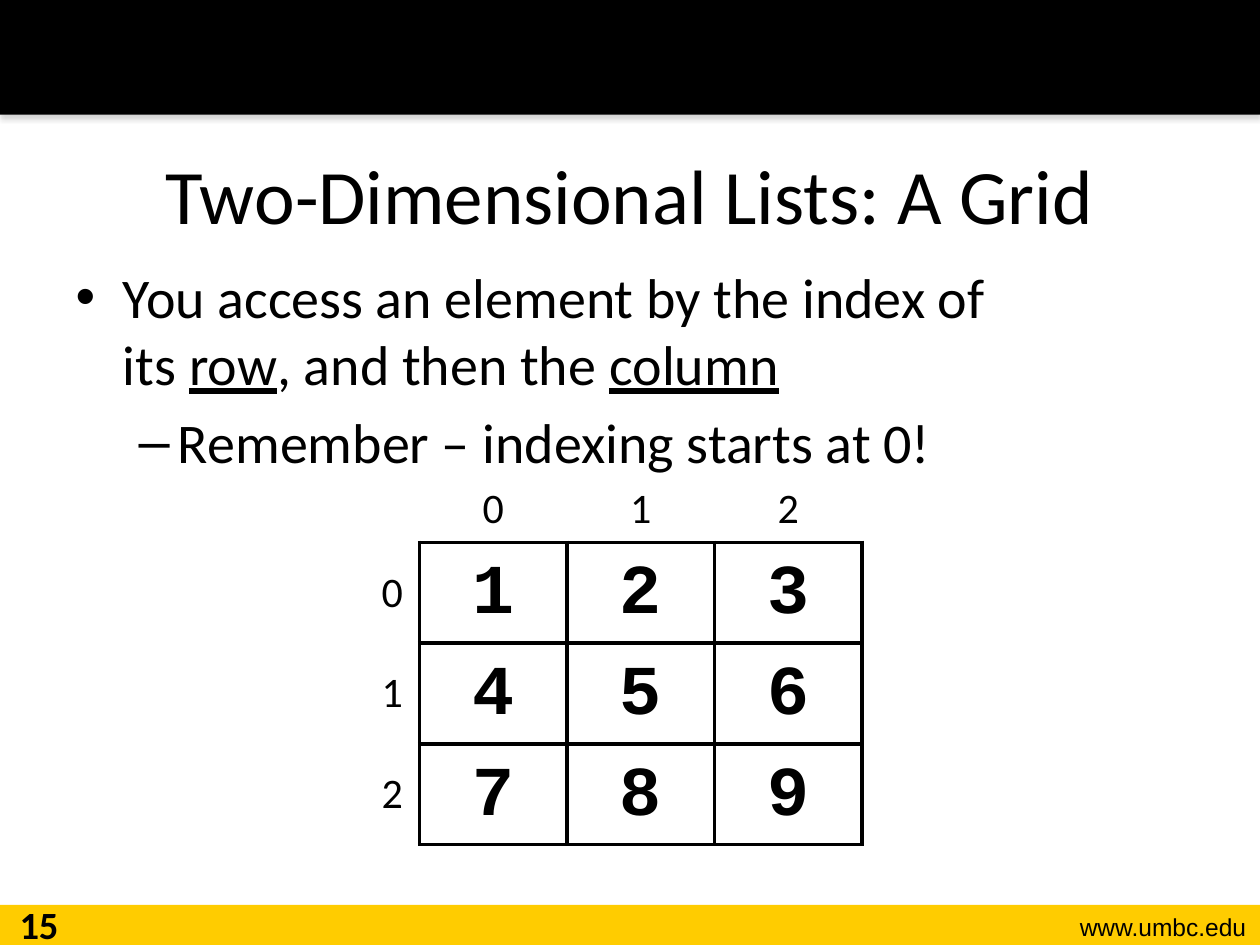
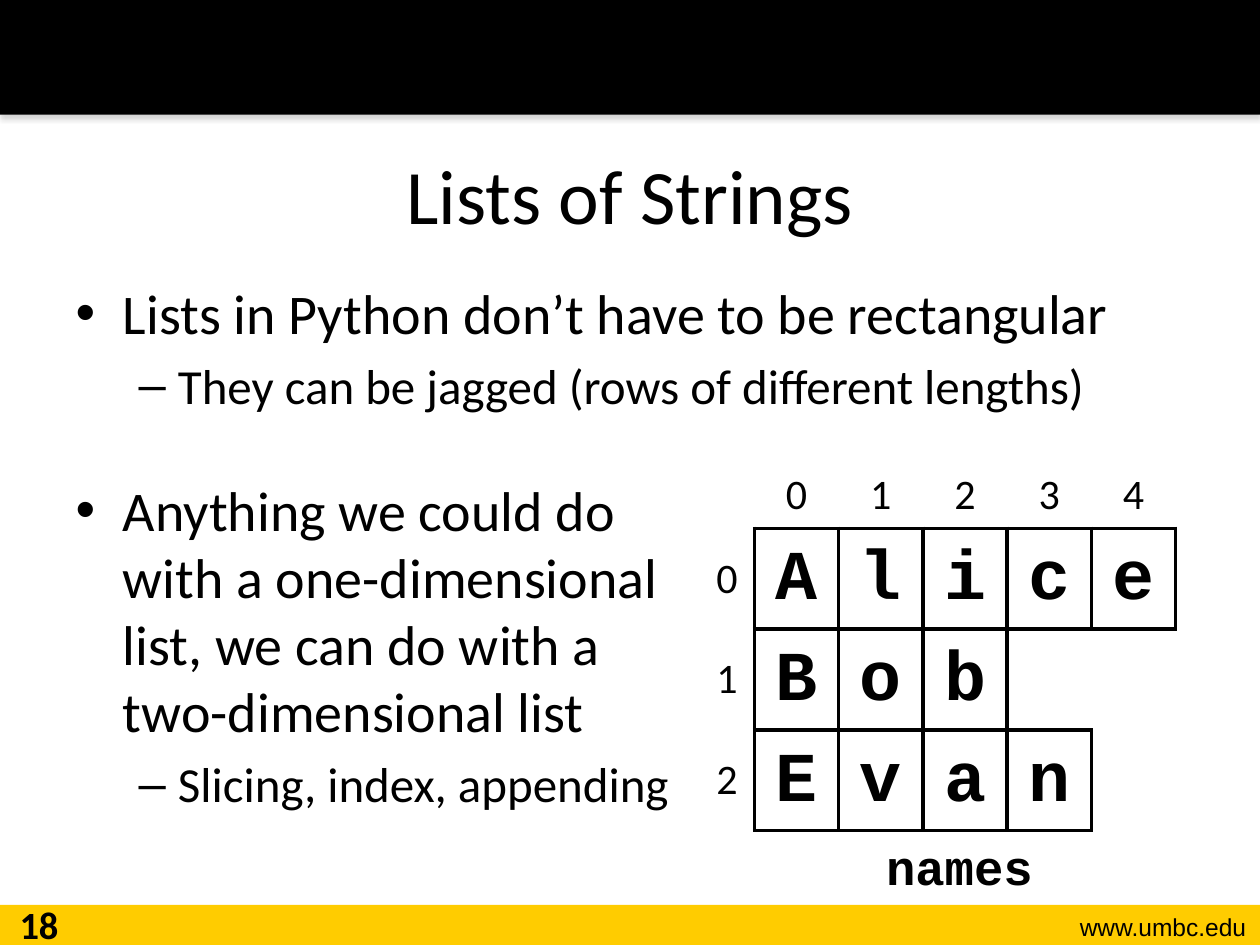
"""Build two slides on two-dimensional lists, each with an indexed grid."""
from dataclasses import dataclass
from typing import Any, Optional

from lxml import etree
from pptx import Presentation
from pptx.dml.color import RGBColor
from pptx.enum import shapes, text
from pptx.oxml.ns import qn
from pptx.util import Pt

BLACK = RGBColor(0x00, 0x00, 0x00)
WHITE = RGBColor(0xFF, 0xFF, 0xFF)
GOLD = RGBColor(0xFF, 0xCC, 0x00)
GRAY = RGBColor(0x80, 0x80, 0x80)
SANS, CODE = "Calibri", "Courier New"
WIDE, HIGH = 720, 540
LEFT, MID, RIGHT = text.PP_ALIGN.LEFT, text.PP_ALIGN.CENTER, text.PP_ALIGN.RIGHT
NO_STYLE = "{2D5ABB26-0587-4C30-8999-92F81FD0307C}"


@dataclass(frozen=True)
class Box:
    x: float
    y: float
    w: float
    h: float

    def pts(self) -> tuple:
        return Pt(self.x), Pt(self.y), Pt(self.w), Pt(self.h)


@dataclass(frozen=True)
class Item:
    words: str
    size: float = 32
    level: int = 0
    gap: float = 0


@dataclass(frozen=True)
class Grid:
    x: float
    y: float
    cols: int
    rows: tuple[str, ...]


@dataclass(frozen=True)
class Page:
    title: str
    num: str
    body: Box
    items: tuple[Item, ...]
    grid: Grid
    label: Optional[str] = None


PAGES = (
    Page("Two-Dimensional Lists: A Grid", "15", Box(36, 146.2, 648, 327.6), (
        Item("You access an element by the index of\nits _row_, and then the _column_"),
        Item("Remember – indexing starts at 0!", level=1, gap=6.4),
    ), Grid(155.5, 271.5, 4, ("123", "456", "789"))),
    Page("Lists of Strings", "18", Box(36, 155.5, 648, 355.7), (
        Item("Lists in Python don’t have to be rectangular"),
        Item("They can be jagged (rows of different lengths)", 28, 1, 5.6),
        Item("Anything we could do\nwith a one-dimensional\nlist, we can do with a\n"
             "two-dimensional list", gap=34.8),
        Item("Slicing, index, appending", 28, 1, 5.6),
    ), Grid(383, 263.5, 7, ("Alice", "Bob", "Evan")), "names"),
)


def write(para: Any, words: str, size: float, face: str = SANS, bold: bool = False,
          align: Any = LEFT, gap: float = 0) -> None:
    """Fill a paragraph; newlines break it and _marks_ underline."""
    para.alignment = align
    para.space_before = Pt(gap)
    for i, line in enumerate(words.split("\n")):
        if i:
            para.add_line_break()
        for j, part in enumerate(line.split("_")):
            if part:
                run = para.add_run()
                run.text = part
                font = run.font
                font.name, font.size, font.bold = face, Pt(size), bold
                font.color.rgb = BLACK
                if j % 2:
                    font.underline = True


def place(shape: Any, box: Box) -> None:
    """Move and size a shape."""
    shape.left, shape.top, shape.width, shape.height = box.pts()


def band(slide: Any, box: Box, color: RGBColor) -> Any:
    """Draw a flat bar."""
    bar = slide.shapes.add_shape(shapes.MSO_SHAPE.RECTANGLE, *box.pts())
    bar.fill.solid()
    bar.fill.fore_color.rgb = color
    bar.line.fill.background()
    bar.shadow.inherit = False
    return bar


def shade(bar: Any) -> None:
    """Give a bar a soft shadow below it."""
    glow = etree.SubElement(bar._element.spPr.find(qn("a:effectLst")), qn("a:outerShdw"),
                            blurRad=str(Pt(3.1)), dist=str(Pt(1.8)), dir="5400000",
                            rotWithShape="0")
    tint = etree.SubElement(glow, qn("a:srgbClr"), val=str(GRAY))
    etree.SubElement(tint, qn("a:alpha"), val="35000")


def note(slide: Any, box: Box, words: str, size: float, **form: Any) -> None:
    """Add a text box of one line."""
    frame = slide.shapes.add_textbox(*box.pts()).text_frame
    frame.word_wrap = True
    write(frame.paragraphs[0], words, size, **form)


def edge(cell: Any, sides: list[bool]) -> None:
    """Rule the left, right, top and bottom of a cell as asked."""
    props = cell._tc.get_or_add_tcPr()
    for i, (tag, on) in enumerate(zip(("lnL", "lnR", "lnT", "lnB"), sides)):
        line = etree.Element(qn(f"a:{tag}"), w=str(Pt(2.25) if on else 0))
        if on:
            fill = etree.SubElement(line, qn("a:solidFill"))
            etree.SubElement(fill, qn("a:srgbClr"), val=str(BLACK))
        else:
            etree.SubElement(line, qn("a:noFill"))
        props.insert(i, line)


def draw_grid(slide: Any, grid: Grid) -> None:
    """Draw the rows of letters with their index labels."""
    count, width = len(grid.rows), 337
    box = Box(grid.x, grid.y, width, 38.4 + 54.9 * count)
    frame = slide.shapes.add_table(count + 1, grid.cols, *box.pts())
    frame._element.find(".//" + qn("a:tableStyleId")).text = NO_STYLE
    table = frame.table
    table.first_row = table.horz_banding = False
    for col in table.columns:
        col.width = Pt(width / grid.cols)
    for r, row in enumerate(table.rows):
        row.height = Pt(54.9 if r else 38.4)

    def full(r: int, c: int) -> bool:
        return 0 < r <= count and 0 < c <= len(grid.rows[r - 1])

    longest = max(map(len, grid.rows))
    for r in range(count + 1):
        for c in range(grid.cols):
            cell = table.cell(r, c)
            cell.fill.solid()
            cell.fill.fore_color.rgb = WHITE
            cell.margin_left = cell.margin_right = Pt(9.6)
            cell.margin_top = cell.margin_bottom = Pt(4.8)
            cell.vertical_anchor = text.MSO_ANCHOR.BOTTOM if c else text.MSO_ANCHOR.MIDDLE
            para = cell.text_frame.paragraphs[0]
            if full(r, c):
                write(para, grid.rows[r - 1][c - 1], 40, face=CODE, bold=True, align=MID)
            elif r and not c:
                write(para, str(r - 1), 24, align=RIGHT)
            elif not r and 0 < c <= longest:
                write(para, str(c - 1), 24, align=MID)
            near = ((r, c - 1), (r, c + 1), (r - 1, c), (r + 1, c))
            edge(cell, [full(r, c) or full(*spot) for spot in near])


def draw_page(deck: Any, page: Page) -> None:
    """Build one slide."""
    slide = deck.slides.add_slide(deck.slide_layouts[1])
    band(slide, Box(0, 517, WIDE, HIGH - 517), GOLD)
    shade(band(slide, Box(0, 0, WIDE, 65.5), BLACK))
    note(slide, Box(576, 517.7, 143.3, 24.2), "www.umbc.edu", 14, face="Arial", align=RIGHT)

    title, body = slide.placeholders
    place(title, Box(36, 65.5, 648, 90))
    title.text_frame.vertical_anchor = text.MSO_ANCHOR.MIDDLE
    write(title.text_frame.paragraphs[0], page.title, 44, align=MID)

    place(body, page.body)
    frame = body.text_frame
    frame.auto_size = text.MSO_AUTO_SIZE.NONE
    for i, item in enumerate(page.items):
        para = frame.add_paragraph() if i else frame.paragraphs[0]
        para.level = item.level
        write(para, item.words, item.size, gap=item.gap)

    note(slide, Box(0, 511.2, 44.6, 28.8), page.num, 22, bold=True, align=MID)
    draw_grid(slide, page.grid)
    if page.label:
        note(slide, Box(473, 474.5, 150.5, 41), page.label, 28, face=CODE, bold=True, align=MID)


def main() -> None:
    """Build and save the deck."""
    deck = Presentation()
    deck.slide_width, deck.slide_height = Pt(WIDE), Pt(HIGH)
    for page in PAGES:
        draw_page(deck, page)
    deck.save("out.pptx")


if __name__ == "__main__":
    main()
